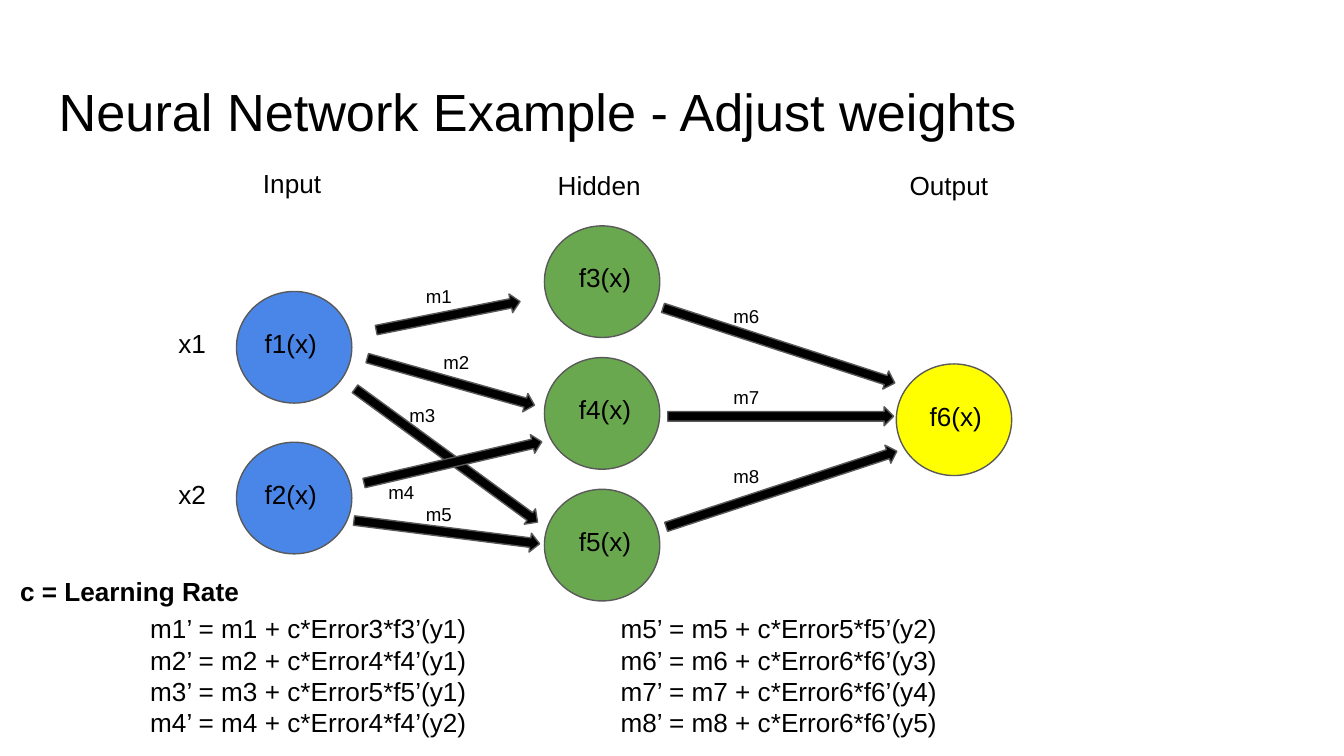
import math
from lxml import etree
from pptx import Presentation
from pptx import util as u
from pptx.dml.color import RGBColor
from pptx.enum import shapes, text
from pptx.oxml.ns import qn

THEME = dict(
    font="Arial", ink="000000", edge="595959",
    input="4A86E8", hidden="6AA84F", output="FFFF00",
    head=28, body=14, small=10, line=0.75,
)

TITLE = "Neural Network Example - Adjust weights"
HEADS = [("Hidden", 10.29), ("Output", 16.94)]
LAYERS = [
    ("input", 4.47, 5.51, 2.85, 0.28, ["f1(x)", "f2(x)"]),
    ("hidden", 10.29, 4.27, 2.49, 0.4, ["f3(x)", "f4(x)", "f5(x)"]),
    ("output", 16.94, 6.88, 0, 0.38, ["f6(x)"]),
]
INPUTS = ["x1", "x2"]
WEIGHTS = [
    ("m1", (7.11, 6.24), (9.83, 5.7), (7.8, 5.13)),
    ("m2", (6.94, 6.77), (10.1, 7.66), (8.13, 6.38)),
    ("m3", (6.71, 7.35), (10.16, 9.87), (7.49, 7.39)),
    ("m4", (6.88, 9.13), (10.24, 8.35), (7.09, 8.84)),
    ("m5", (6.69, 9.84), (10.2, 10.28), (7.8, 9.25)),
    ("m6", (12.53, 5.82), (16.91, 7.24), (13.61, 5.51)),
    ("m7", (12.62, 7.87), (16.89, 7.87), (13.61, 7.04)),
    ("m8", (12.59, 9.96), (16.95, 8.53), (13.61, 8.53)),
]
RULES = [
    (2.59, 6.6, [
        "m1’ = m1 + c*Error3*f3’(y1)",
        "m2’ = m2 + c*Error4*f4’(y1)",
        "m3’ = m3 + c*Error5*f5’(y1)",
        "m4’ = m4 + c*Error4*f4’(y2)",
    ]),
    (11.48, 7.82, [
        "m5’ = m5 + c*Error5*f5’(y2)",
        "m6’ = m6 + c*Error6*f6’(y3)",
        "m7’ = m7 + c*Error6*f6’(y4)",
        "m8’ = m8 + c*Error6*f6’(y5)",
    ]),
]
RATE = "c = Learning Rate"

NODE_W, NODE_H = 2.18, 2.11
DROP, ROW_H, THICK = 0.43, 1.24, 0.36

deck = Presentation()
deck.slide_width, deck.slide_height = u.Cm(25.4), u.Cm(14.29)
slide = deck.slides.add_slide(deck.slide_layouts[3])


def color(name):
    return RGBColor.from_string(THEME[name])


def write(words, x, y, w, h, size="body", bold=False, holder=None, lead=None, after=None):
    box = holder or slide.shapes.add_textbox(0, 0, 0, 0)
    box.left, box.top, box.width, box.height = map(u.Cm, (x, y, w, h))
    frame = box.text_frame
    frame.word_wrap = True
    frame.auto_size = text.MSO_AUTO_SIZE.NONE
    frame.vertical_anchor = text.MSO_ANCHOR.TOP
    frame.margin_left = frame.margin_right = u.Cm(0.25)
    frame.margin_top = frame.margin_bottom = u.Cm(0.25)
    frame.text = "\n".join(words) if isinstance(words, list) else words
    for para in frame.paragraphs:
        para.alignment = text.PP_ALIGN.LEFT
        para.space_before = u.Pt(0)
        if lead:
            para.line_spacing = lead
            para.space_after = u.Pt(after)
        if holder:
            prop = para._p.get_or_add_pPr()
            prop.set("marL", "0")
            prop.set("indent", "0")
            etree.SubElement(prop, qn("a:buNone"))
        for run in para.runs:
            run.font.name = THEME["font"]
            run.font.size = u.Pt(THEME[size])
            run.font.bold = bold
            run.font.color.rgb = color("ink")


def draw(kind, x, y, w, h, fill, turn=0):
    shape = slide.shapes.add_shape(kind, *map(u.Cm, (x, y, w, h)))
    shape.shadow.inherit = False
    shape.fill.solid()
    shape.fill.fore_color.rgb = color(fill)
    shape.line.color.rgb = color("edge")
    shape.line.width = u.Pt(THEME["line"])
    shape.rotation = turn


def arrow(tail, head):
    dx, dy = head[0] - tail[0], head[1] - tail[1]
    span = math.hypot(dx, dy)
    x = (tail[0] + head[0] - span) / 2
    y = (tail[1] + head[1] - THICK) / 2
    turn = math.degrees(math.atan2(dy, dx)) % 360
    draw(shapes.MSO_SHAPE.RIGHT_ARROW, x, y, span, THICK, "ink", turn)


title, *bodies = slide.placeholders
write(TITLE, 0.86, 1.24, 23.67, 1.6, size="head", holder=title)
for body, (head, x) in zip(bodies, HEADS):
    write(head, x, 2.87, NODE_W, 1.32, holder=body, lead=1.15, after=16)
write("Input", 4.72, 2.92, 1.68, ROW_H)

for fill, x, top, step, inset, names in LAYERS:
    for i, name in enumerate(names):
        y = top + i * step
        draw(shapes.MSO_SHAPE.OVAL, x, y, NODE_W, NODE_H, fill)
        write(name, x + inset, y + DROP, 1.8, ROW_H)

top, step = LAYERS[0][2:4]
for i, name in enumerate(INPUTS):
    write(name, 3.12, top + i * step + DROP, 1.12, ROW_H)

for name, tail, head, spot in WEIGHTS:
    arrow(tail, head)
for name, tail, head, spot in WEIGHTS:
    write(name, *spot, 1.4, 1.14, size="small")

for x, w, lines in RULES:
    write(lines, x, 11.33, w, 2.79)
write(RATE, 0.13, 10.62, 5.16, 1.32, bold=True)

deck.save("out.pptx")
